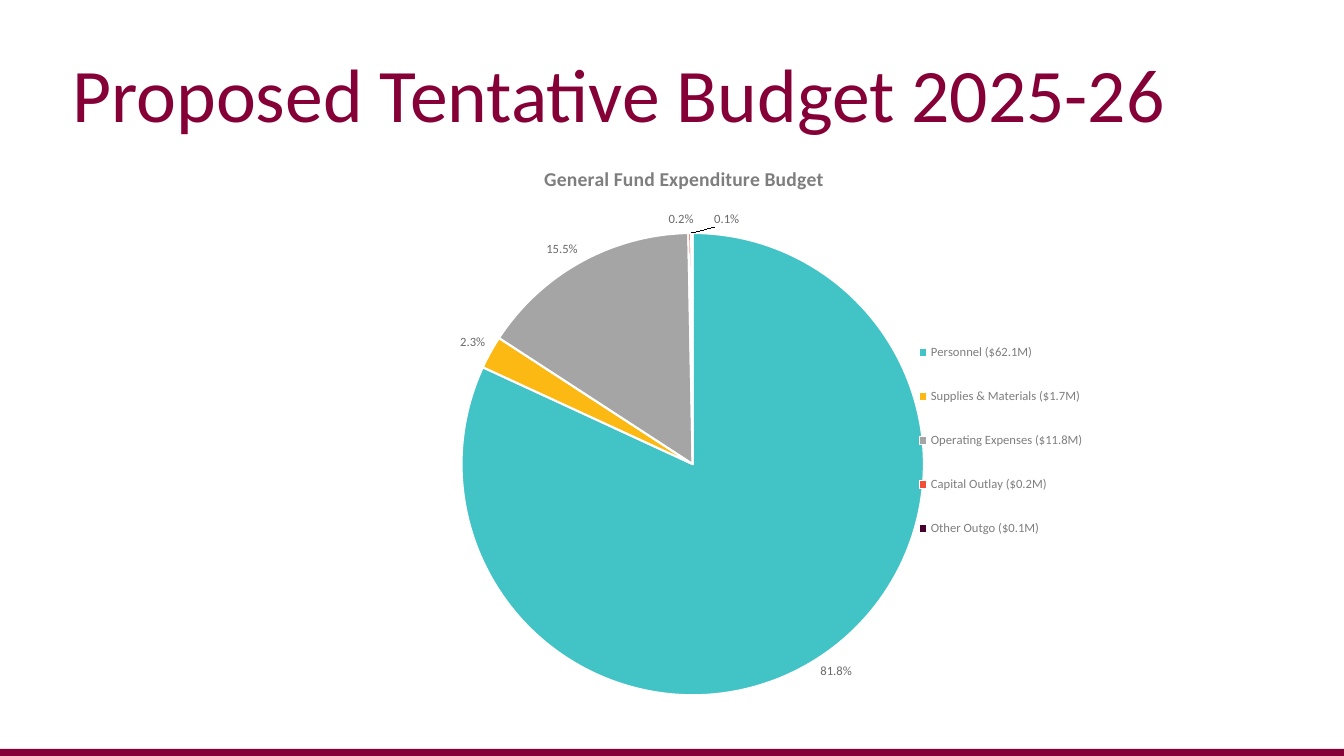
from lxml import etree
from pptx import Presentation
from pptx.chart.data import CategoryChartData
from pptx.dml.color import RGBColor
from pptx.enum.chart import XL_CHART_TYPE, XL_LABEL_POSITION, XL_LEGEND_POSITION
from pptx.enum.shapes import MSO_SHAPE
from pptx.enum.text import MSO_ANCHOR
from pptx.oxml import parse_xml
from pptx.oxml.ns import nsdecls, qn
from pptx.util import Inches, Pt

COLORS = {"maroon": "860038", "title": "850037", "white": "FFFFFF",
          "heading": "7E7E7E", "label": "6A6A6A", "text": "393939"}
EXPENSES = [("Personnel ($62.1M)", 0.818, "42C3C5"),
            ("Supplies & Materials ($1.7M)", 0.023, "FCB813"),
            ("Operating Expenses ($11.8M)", 0.155, "A5A5A5"),
            ("Capital Outlay ($0.2M)", 0.002, "F44E38"),
            ("Other Outgo ($0.1M)", 0.001, "48002E")]


def style_font(font, *, size, color, bold=False):
    font.name = "Calibri"
    font.size = Pt(size)
    font.bold = bold
    font.color.rgb = RGBColor.from_string(COLORS[color])


def make_layout(**values):
    layout = parse_xml(f"<c:layout {nsdecls('c')}><c:manualLayout/></c:layout>")
    for tag, value in values.items():
        etree.SubElement(layout[0], qn(f"c:{tag}")).set("val", str(value))
    return layout


prs = Presentation()
prs.slide_width, prs.slide_height = Inches(13.33), Inches(7.5)
s = prs.slides.add_slide(prs.slide_layouts[6])

bar = s.shapes.add_shape(MSO_SHAPE.RECTANGLE, Inches(0), Inches(7.43), Inches(13.33), Inches(0.07))
bar.shadow.inherit = False
bar.fill.solid()
bar.fill.fore_color.rgb = RGBColor.from_string(COLORS["maroon"])
bar.line.fill.background()

tf = s.shapes.add_textbox(Inches(0.62), Inches(0), Inches(12.09), Inches(1.43)).text_frame
tf.word_wrap = True
tf.vertical_anchor = MSO_ANCHOR.BOTTOM
p = tf.paragraphs[0]
p.line_spacing = 0.9
r = p.add_run()
r.text = "Proposed Tentative Budget 2025-26"
style_font(r.font, size=54, color="title")

data = CategoryChartData(number_format="0.0%")
data.categories = [name for name, _, _ in EXPENSES]
data.add_series("Series 1", [share for _, share, _ in EXPENSES])
chart = s.shapes.add_chart(XL_CHART_TYPE.PIE, Inches(2.48), Inches(1.43),
                           Inches(8.61), Inches(5.88), data).chart
style_font(chart.font, size=10, color="text")

chart.has_title = True
p = chart.chart_title.text_frame.paragraphs[0]
r = p.add_run()
r.text = "General Fund Expenditure Budget"
style_font(r.font, size=14, color="heading", bold=True)

chart.has_legend = True
legend = chart.legend
legend.position = XL_LEGEND_POSITION.BOTTOM
legend.include_in_layout = False
style_font(legend.font, size=9, color="heading")
legend_xml = chart.element.find(".//" + qn("c:legend"))
for old in legend_xml.findall(qn("c:layout")):
    legend_xml.remove(old)
legend_xml.find(qn("c:legendPos")).addnext(
    make_layout(xMode="edge", yMode="edge", x=0.75, y=0.29, w=0.23, h=0.42))

plot_xml = chart.element.find(".//" + qn("c:plotArea"))
for old in plot_xml.findall(qn("c:layout")):
    plot_xml.remove(old)
plot_xml.insert(0, make_layout(layoutTarget="inner", xMode="edge", yMode="edge",
                               x=0.24, y=0.15, w=0.54, h=0.78))

plot = chart.plots[0]
plot.vary_by_categories = True
series = plot.series[0]
for i, (_, _, color) in enumerate(EXPENSES):
    fmt = series.points[i].format
    fmt.fill.solid()
    fmt.fill.fore_color.rgb = RGBColor.from_string(color)
    fmt.line.color.rgb = RGBColor.from_string(COLORS["white"])
    fmt.line.width = Pt(1.5)

labels = series.data_labels
labels.show_value = True
labels.show_percentage = False
labels.number_format = "0.0%"
labels.number_format_is_linked = False
labels.position = XL_LABEL_POSITION.OUTSIDE_END
style_font(labels.font, size=9, color="label")

for i, shift in ((3, -0.01), (4, 0.04)):
    label = series.points[i].data_label
    label.position = XL_LABEL_POSITION.OUTSIDE_END
    style_font(label.font, size=9, color="label")
    idx = series.points[i].data_label.font and chart.element.find(
        f".//{qn('c:dLbl')}/{qn('c:idx')}[@val='{i}']")
    idx.addnext(parse_xml(f'<c:numFmt {nsdecls("c")} formatCode="0.0%" sourceLinked="0"/>'))
    idx.addnext(make_layout(x=shift, y=0))

prs.save("out.pptx")
